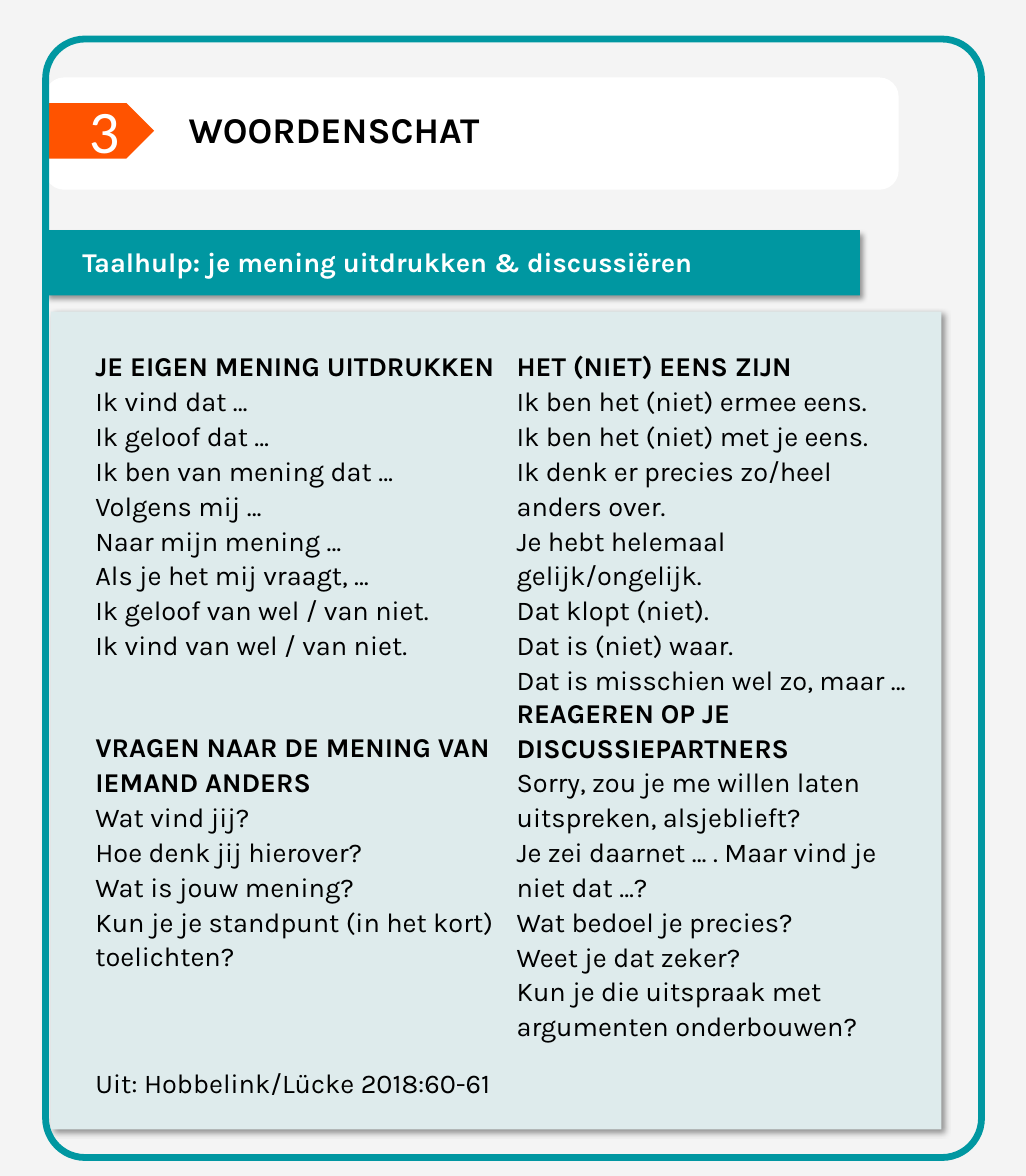
from lxml.etree import SubElement
from pptx import Presentation
from pptx.dml.color import RGBColor
from pptx.enum.shapes import MSO_SHAPE
from pptx.enum.text import MSO_AUTO_SIZE
from pptx.oxml.ns import qn
from pptx.util import Inches, Pt

BACKGROUND = RGBColor(0xF4, 0xF4, 0xF4)
PANEL = RGBColor(0xDE, 0xEB, 0xEC)
TEAL = RGBColor(0x00, 0x97, 0xA1)
ORANGE = RGBColor(0xFF, 0x53, 0x00)
WHITE = RGBColor(0xFF, 0xFF, 0xFF)
BLACK = RGBColor(0x00, 0x00, 0x00)

LEFT_COLUMN, RIGHT_COLUMN = 0.78, 4.66
COLUMN_WIDTH = 3.88
LINE_SPACING = 1.07

# left, top, height, heading, phrases
PHRASE_GROUPS = [
    (LEFT_COLUMN, 3.15, 3.32, "JE EIGEN MENING UITDRUKKEN", [
        "Ik vind dat …",
        "Ik geloof dat …",
        "Ik ben van mening dat …",
        "Volgens mij …",
        "Naar mijn mening …",
        "Als je het mij vraagt, …",
        "Ik geloof van wel / van niet.",
        "Ik vind van wel / van niet.",
    ]),
    (LEFT_COLUMN, 6.66, 2.35, "VRAGEN NAAR DE MENING VAN IEMAND ANDERS", [
        "Wat vind jij?",
        "Hoe denk jij hierover?",
        "Wat is jouw mening?",
        "Kun je je standpunt (in het kort) toelichten?",
    ]),
    (RIGHT_COLUMN, 3.15, 2.99, "HET (NIET) EENS ZIJN", [
        "Ik ben het (niet) ermee eens.",
        "Ik ben het (niet) met je eens.",
        "Ik denk er precies zo/heel anders over.",
        "Je hebt helemaal gelijk/ongelijk.",
        "Dat klopt (niet).",
        "Dat is (niet) waar.",
        "Dat is misschien wel zo, maar …",
    ]),
    (RIGHT_COLUMN, 6.34, 3.32, "REAGEREN OP JE DISCUSSIEPARTNERS", [
        "Sorry, zou je me willen laten uitspreken, alsjeblieft?",
        "Je zei daarnet … . Maar vind je niet dat …?",
        "Wat bedoel je precies?",
        "Weet je dat zeker?",
        "Kun je die uitspraak met argumenten onderbouwen?",
    ]),
]


def add_block(slide, kind, left, top, width, height, fill=None, line=None, line_width=1):
    sp = slide.shapes.add_shape(kind, Inches(left), Inches(top), Inches(width), Inches(height))
    sp.shadow.inherit = False
    if fill is None:
        sp.fill.background()
    else:
        sp.fill.solid()
        sp.fill.fore_color.rgb = fill
    if line is None:
        sp.line.fill.background()
    else:
        sp.line.color.rgb = line
        sp.line.width = Pt(line_width)
    return sp


def add_drop_shadow(sp):
    """Give the shape a soft black shadow towards the lower right."""
    effects = sp.element.spPr.find(qn("a:effectLst"))
    shadow = SubElement(effects, qn("a:outerShdw"), blurRad=str(Pt(4)), dist=str(Pt(3)),
                        dir=str(45 * 60000), algn="tl", rotWithShape="0")
    color = SubElement(shadow, qn("a:srgbClr"), val=str(BLACK))
    SubElement(color, qn("a:alpha"), val="40000")


def add_text(slide, left, top, width, height, lines, size=18, color=BLACK,
             font="Karla", bold_first=False, spacing=None):
    """Add one paragraph per line; only the first can be bold."""
    box = slide.shapes.add_textbox(Inches(left), Inches(top), Inches(width), Inches(height))
    tf = box.text_frame
    tf.word_wrap = True
    tf.auto_size = MSO_AUTO_SIZE.SHAPE_TO_FIT_TEXT
    for i, line in enumerate(lines):
        p = tf.paragraphs[0] if i == 0 else tf.add_paragraph()
        p.text = line
        p.line_spacing = spacing
        p.font.name = font
        p.font.size = Pt(size)
        p.font.bold = bold_first and i == 0
        p.font.color.rgb = color


def main():
    prs = Presentation()
    prs.slide_width, prs.slide_height = Inches(9.45), Inches(10.83)
    slide = prs.slides.add_slide(prs.slide_layouts[6])
    slide.background.fill.solid()
    slide.background.fill.fore_color.rgb = BACKGROUND

    panel = add_block(slide, MSO_SHAPE.ROUNDED_RECTANGLE, 0.47, 2.87, 8.2, 7.53, PANEL)
    panel.adjustments[0] = 0
    add_drop_shadow(panel)
    banner = add_block(slide, MSO_SHAPE.RECTANGLE, 0.42, 2.12, 7.5, 0.6, TEAL)
    add_drop_shadow(banner)
    add_block(slide, MSO_SHAPE.ROUNDED_RECTANGLE, 0.42, 0.72, 7.85, 1.02, WHITE, WHITE)
    add_block(slide, MSO_SHAPE.PENTAGON, 0.42, 0.95, 1, 0.51, ORANGE)
    frame = add_block(slide, MSO_SHAPE.ROUNDED_RECTANGLE, 0.42, 0.36, 8.62, 10.3,
                      line=TEAL, line_width=4.5)
    frame.adjustments[0] = 0.042

    add_text(slide, 0.72, 0.81, 0.54, 0.77, ["3"], size=40, color=WHITE, font="Calibri")
    add_text(slide, 1.64, 0.94, 6.96, 0.5, ["WOORDENSCHAT"], size=24, bold_first=True)
    add_text(slide, 0.66, 2.21, 6.92, 0.4, ["Taalhulp: je mening uitdrukken & discussiëren"],
             color=WHITE, bold_first=True)
    for left, top, height, heading, phrases in PHRASE_GROUPS:
        add_text(slide, left, top, COLUMN_WIDTH, height, [heading] + phrases,
                 bold_first=True, spacing=LINE_SPACING)
    add_text(slide, LEFT_COLUMN, 9.75, COLUMN_WIDTH, 0.4,
             ["Uit: Hobbelink/Lücke 2018:60-61"], spacing=LINE_SPACING)

    prs.save("out.pptx")


if __name__ == "__main__":
    main()
